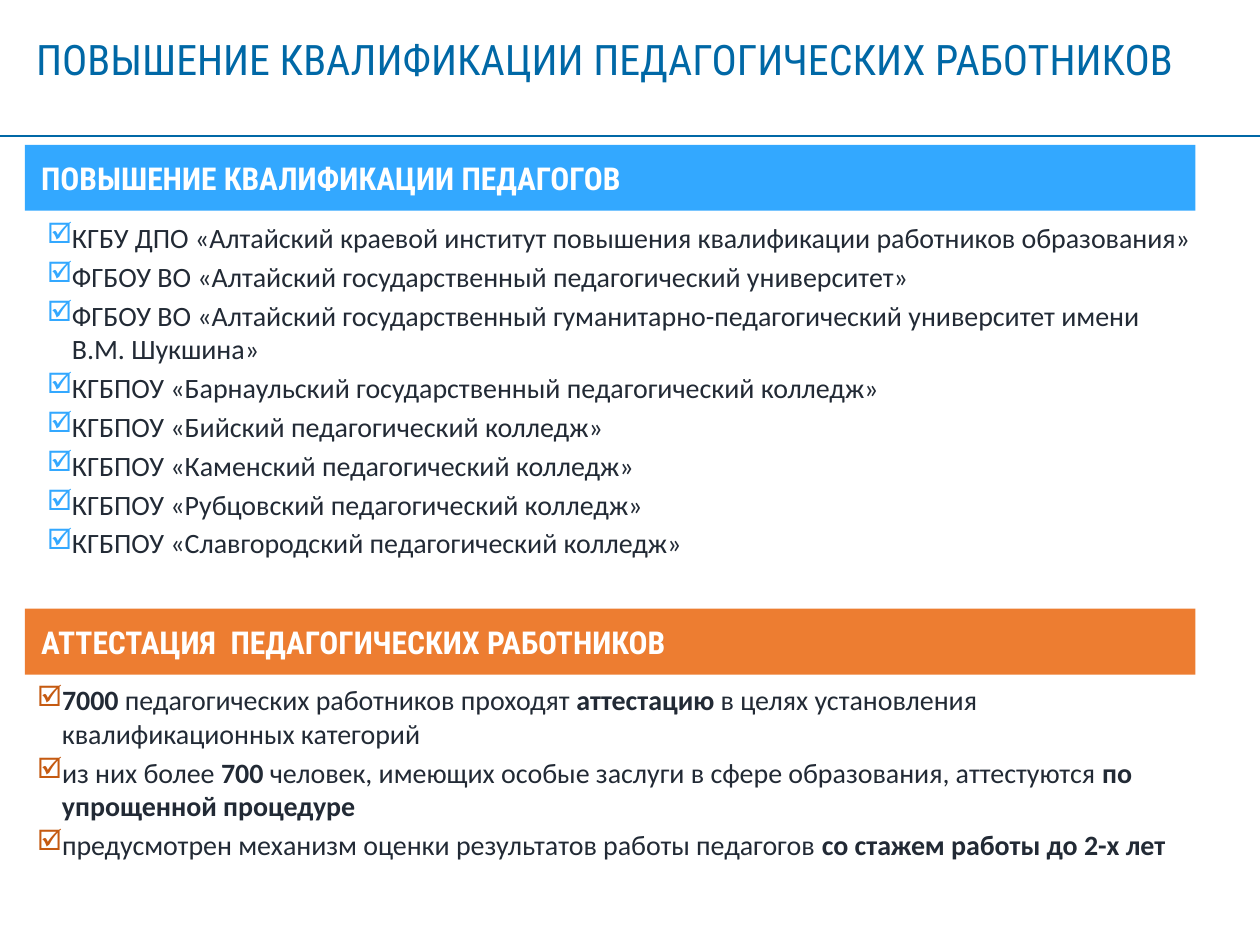
from dataclasses import dataclass

from lxml.etree import SubElement
from pptx import Presentation
from pptx.dml.color import RGBColor as RGB
from pptx.enum.shapes import MSO_CONNECTOR as CONN, MSO_SHAPE as SHAPE
from pptx.enum.text import MSO_ANCHOR as ANCHOR, MSO_AUTO_SIZE as AUTO, PP_ALIGN as ALIGN
from pptx.oxml.ns import qn
from pptx.util import Cm, Pt


@dataclass(frozen=True)
class Theme:
    title: str = "0068A6"
    blue: str = "33A8FF"
    orange: str = "ED7D31"
    rust: str = "C55A11"
    ink: str = "222A35"
    white: str = "FFFFFF"
    head_font: str = "Roboto Condensed"
    body_font: str = "Calibri"
    title_size: int = 24
    bar_size: int = 18
    body_size: int = 16


LEFT, WIDTH, BAR_HEIGHT = 0.5, 23.6, 1.33

TRAINING = [
    "КГБУ ДПО «Алтайский краевой институт повышения квалификации работников образования»",
    "ФГБОУ ВО «Алтайский государственный педагогический университет»",
    "ФГБОУ ВО «Алтайский государственный гуманитарно-педагогический университет имени В.М. Шукшина»",
    "КГБПОУ «Барнаульский государственный педагогический колледж»",
    "КГБПОУ «Бийский педагогический колледж»",
    "КГБПОУ «Каменский педагогический колледж»",
    "КГБПОУ «Рубцовский педагогический колледж»",
    "КГБПОУ «Славгородский педагогический колледж»",
]
CERTIFICATION = [
    "*7000* педагогических работников проходят *аттестацию* в целях установления квалификационных категорий",
    "из них более *700* человек, имеющих особые заслуги в сфере образования, аттестуются *по упрощенной процедуре*",
    "предусмотрен механизм оценки результатов работы педагогов *со стажем работы до 2-х лет*",
]


class Deck:
    """Draws styled elements on the current slide; asterisks in list items mark bold text."""

    def __init__(self, prs, theme):
        self.t = theme
        self.s = prs.slides.add_slide(prs.slide_layouts[6])

    def font(self, r, name, size, color, bold=False):
        r.font.name, r.font.size, r.font.bold = name, Pt(size), bold
        r.font.color.rgb = RGB.from_string(color)

    def solid(self, parent, color):
        fill = SubElement(parent, qn("a:solidFill"))
        SubElement(fill, qn("a:srgbClr"), val=color)

    def box(self, x, y, w, h):
        tf = self.s.shapes.add_textbox(Cm(x), Cm(y), Cm(w), Cm(h)).text_frame
        tf.word_wrap, tf.auto_size = True, AUTO.SHAPE_TO_FIT_TEXT
        return tf

    def title(self, text, x, y, w, h):
        tf = self.box(x, y, w, h)
        tf.text = text
        r = tf.paragraphs[0].runs[0]
        self.font(r, self.t.head_font, self.t.title_size, self.t.title)
        ln = r.font._element.makeelement(qn("a:ln"), {"w": str(Pt(1))})
        self.solid(ln, self.t.title)
        r.font._element.insert(0, ln)

    def rule(self, y, w):
        line = self.s.shapes.add_connector(CONN.STRAIGHT, 0, Cm(y), Cm(w), Cm(y))
        line.line.width = Pt(1)
        line.line.color.rgb = RGB.from_string(self.t.title)
        SubElement(line._element.spPr, qn("a:effectLst"))

    def bar(self, text, y, color):
        sp = self.s.shapes.add_shape(SHAPE.RECTANGLE, Cm(LEFT), Cm(y), Cm(WIDTH), Cm(BAR_HEIGHT))
        sp.shadow.inherit = False
        sp.fill.solid()
        sp.fill.fore_color.rgb = RGB.from_string(color)
        sp.line.fill.background()
        tf = sp.text_frame
        tf.margin_left = tf.margin_right = tf.margin_top = tf.margin_bottom = Cm(0.33)
        tf.vertical_anchor, tf.word_wrap = ANCHOR.MIDDLE, True
        tf.text = text
        p = tf.paragraphs[0]
        p.alignment = ALIGN.LEFT
        self.font(p.runs[0], self.t.head_font, self.t.bar_size, self.t.white, True)

    def checklist(self, items, x, y, h, color):
        tf = self.box(x, y, WIDTH, h)
        for i, item in enumerate(items):
            p = tf.add_paragraph() if i else tf.paragraphs[0]
            p.space_after = Pt(3)
            pPr = p._p.get_or_add_pPr()
            pPr.set("marL", str(Cm(0.5)))
            pPr.set("indent", str(-Cm(0.5)))
            bu = SubElement(pPr, qn("a:buClr"))
            SubElement(bu, qn("a:srgbClr"), val=color)
            SubElement(pPr, qn("a:buChar"), char="☑")
            for n, part in enumerate(item.split("*")):
                if part:
                    r = p.add_run()
                    r.text = part
                    self.font(r, self.t.body_font, self.t.body_size, self.t.ink, n % 2 == 1)


def main():
    prs = Presentation()
    prs.slide_width, prs.slide_height = Cm(25.4), Cm(19.05)
    t = Theme()
    deck = Deck(prs, t)
    deck.title("ПОВЫШЕНИЕ КВАЛИФИКАЦИИ ПЕДАГОГИЧЕСКИХ РАБОТНИКОВ", 0.48, 0.56, 24.66, 2.31)
    deck.rule(2.74, 25.4)
    deck.bar("ПОВЫШЕНИЕ КВАЛИФИКАЦИИ ПЕДАГОГОВ", 2.92, t.blue)
    deck.checklist(TRAINING, 0.7, 4.32, 7.85, t.blue)
    deck.bar("АТТЕСТАЦИЯ  ПЕДАГОГИЧЕСКИХ РАБОТНИКОВ", 12.27, t.orange)
    deck.checklist(CERTIFICATION, LEFT, 13.64, 3.89, t.rust)
    prs.save("out.pptx")


if __name__ == "__main__":
    main()
